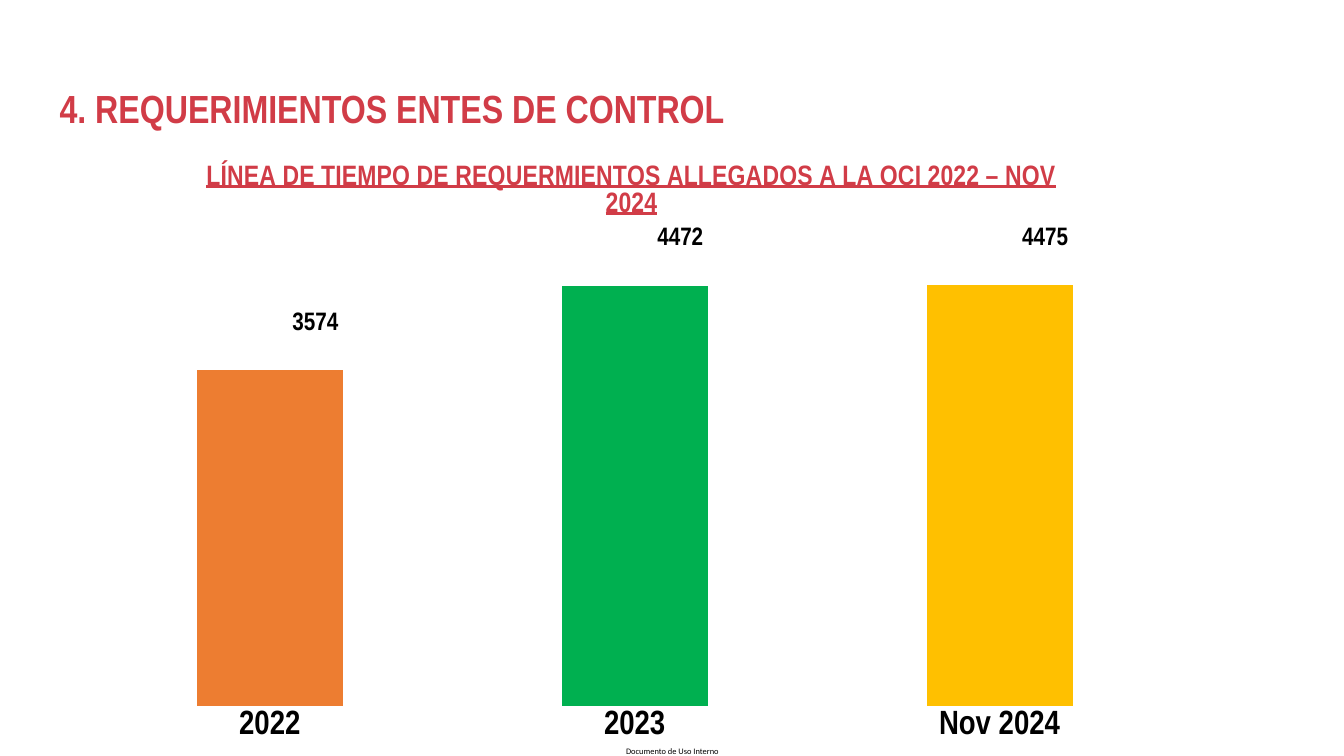
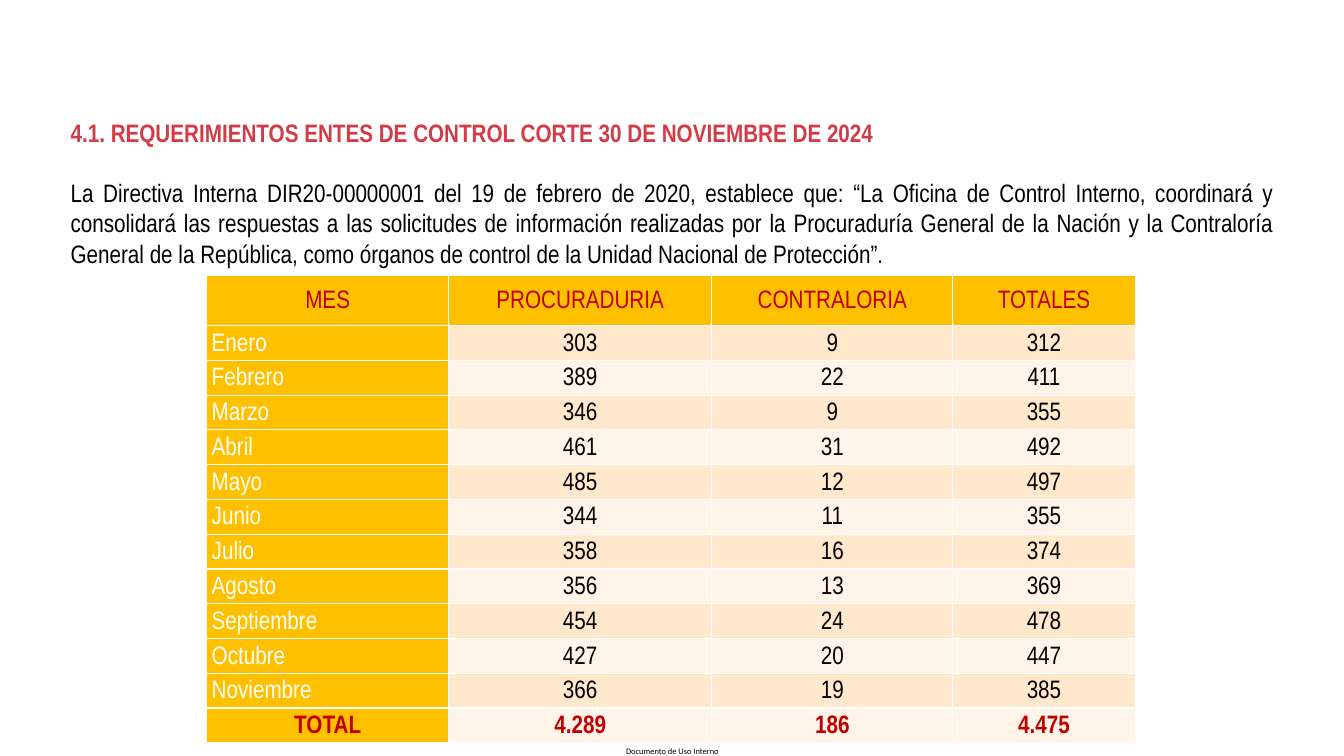
"""Build two slides on requests from control bodies: a yearly chart and a monthly table."""
from dataclasses import dataclass
from typing import Any

from lxml import etree
from pptx import Presentation
from pptx import util as u
from pptx.chart import data
from pptx.dml.color import RGBColor
from pptx.enum import chart as ch, text as tx
from pptx.oxml import ns

RED = RGBColor(0xD1, 0x3C, 0x47)
WINE = RGBColor(0xC0, 0x00, 0x00)
BLACK = RGBColor(0x00, 0x00, 0x00)
WHITE = RGBColor(0xFF, 0xFF, 0xFF)
GOLD = RGBColor(0xFF, 0xC0, 0x00)
ORANGE = RGBColor(0xED, 0x7D, 0x31)
GREEN = RGBColor(0x00, 0xB0, 0x50)
BANDS = (RGBColor(0xFF, 0xF4, 0xE7), RGBColor(0xFF, 0xE8, 0xCC))
FACE = "Arial Narrow"
LEFT, MID, JUST = tx.PP_ALIGN.LEFT, tx.PP_ALIGN.CENTER, tx.PP_ALIGN.JUSTIFY
TOP, BASE = tx.MSO_ANCHOR.TOP, tx.MSO_ANCHOR.BOTTOM


@dataclass(frozen=True)
class Box:
    """Place of an object in inches."""
    left: float
    top: float
    width: float
    height: float

    def lengths(self) -> tuple:
        return tuple(u.Inches(n) for n in (self.left, self.top, self.width, self.height))


@dataclass(frozen=True)
class Style:
    """Look of a piece of text."""
    size: float
    color: RGBColor = BLACK
    bold: bool = False
    face: str = FACE
    align: Any = JUST
    line: float = 1.0


@dataclass(frozen=True)
class Bar:
    """One column of the chart."""
    name: str
    value: int
    color: RGBColor


@dataclass(frozen=True)
class Month:
    """One row of counts in the table."""
    name: str
    first: int
    second: int

    def cells(self) -> list[str]:
        return [self.name, *map(str, (self.first, self.second, self.first + self.second))]


BARS = (Bar("2022", 3574, ORANGE), Bar("2023", 4472, GREEN), Bar("Nov 2024", 4475, GOLD))
MONTHS = (
    Month("Enero", 303, 9), Month("Febrero", 389, 22), Month("Marzo", 346, 9),
    Month("Abril", 461, 31), Month("Mayo", 485, 12), Month("Junio", 344, 11),
    Month("Julio", 358, 16), Month("Agosto", 356, 13), Month("Septiembre", 454, 24),
    Month("Octubre", 427, 20), Month("Noviembre", 366, 19),
)
HEADS = ["MES", "PROCURADURIA", "CONTRALORIA", "TOTALES"]
WIDTHS = (2.4, 2.61, 2.39, 1.81)
RULE = (
    "La Directiva Interna DIR20-00000001 del 19 de febrero de 2020, establece que: "
    "“La Oficina de Control Interno, coordinará y consolidará las respuestas a las "
    "solicitudes de información realizadas por la Procuraduría General de la Nación y la "
    "Contraloría General de la República, como órganos de control de la Unidad Nacional "
    "de Protección”."
)


def assign(item: Any, values: dict) -> None:
    for key, value in values.items():
        setattr(item, key, value)


def ink(font: Any, style: Style) -> None:
    assign(font, {"size": u.Pt(style.size), "bold": style.bold, "name": style.face})
    font.color.rgb = style.color


def write(frame: Any, words: str, style: Style) -> None:
    frame.text = words
    para = frame.paragraphs[0]
    assign(para, {"alignment": style.align, "line_spacing": style.line,
                  "space_before": u.Pt(0)})
    ink(para.runs[0].font, style)


def fill_holder(shape: Any, box: Box, words: str, style: Style, anchor: Any) -> None:
    assign(shape, dict(zip(("left", "top", "width", "height"), box.lengths())))
    frame = shape.text_frame
    assign(frame, {"word_wrap": True, "auto_size": tx.MSO_AUTO_SIZE.NONE,
                   "vertical_anchor": anchor})
    write(frame, words, style)


def strip_bullet(para: Any) -> None:
    props = para._p.get_or_add_pPr()
    for key in ("marL", "indent"):
        props.set(key, "0")
    etree.SubElement(props, ns.qn("a:buNone"))


def add_foot(deck: Any, slide: Any) -> None:
    box = slide.shapes.add_textbox(*Box(6.21, 7.4, 0.94, 0.1).lengths())
    sides = ("left", "top", "right", "bottom")
    assign(box.text_frame, {f"margin_{side}": 0 for side in sides})
    write(box.text_frame, "Documento de Uso Interno", Style(6, face="Calibri", align=LEFT))
    box.element.nvSpPr.cNvPr.set("id", "99")
    deck.slide_master.shapes.element.append(box.element)


def place(node: Any, index: int, **values: Any) -> None:
    for old in node.findall(ns.qn("c:layout")):
        node.remove(old)
    layout = etree.Element(ns.qn("c:layout"))
    manual = etree.SubElement(layout, ns.qn("c:manualLayout"))
    for key, value in values.items():
        etree.SubElement(manual, ns.qn(f"c:{key}")).set("val", str(value))
    node.insert(index, layout)


def add_bars(slide: Any, box: Box) -> None:
    source = data.CategoryChartData()
    source.categories = [bar.name for bar in BARS]
    source.add_series("Series 1", [bar.value for bar in BARS])
    kind = ch.XL_CHART_TYPE.COLUMN_CLUSTERED
    chart = slide.shapes.add_chart(kind, *box.lengths(), source).chart
    ink(chart.font, Style(10))
    assign(chart, {"has_legend": False, "has_title": True})
    title = chart.chart_title
    write(title.text_frame, "LÍNEA DE TIEMPO DE REQUERMIENTOS ALLEGADOS A LA OCI 2022 – NOV 2024",
          Style(20, RED, True, align=MID, line=0.9))
    title.text_frame.paragraphs[0].runs[0].font.underline = True
    place(title.element, 1, xMode="edge", yMode="edge", x=0.12, y=0.03)

    axis = chart.category_axis
    axis.major_tick_mark = ch.XL_TICK_MARK.NONE
    axis.format.line.fill.background()
    ink(axis.tick_labels.font, Style(24, bold=True))
    assign(chart.value_axis, {"visible": False, "has_major_gridlines": False,
                              "minimum_scale": 0, "maximum_scale": 5000})
    plot = chart.plots[0]
    assign(plot, {"gap_width": 150, "vary_by_categories": False})
    for index, bar in enumerate(BARS):
        point = plot.series[0].points[index]
        point.format.fill.solid()
        point.format.fill.fore_color.rgb = bar.color
        ink(point.data_label.font, Style(18, bold=True))
        point.data_label.position = ch.XL_LABEL_POSITION.OUTSIDE_END
    for label in chart.element.xpath(".//c:dLbl"):
        place(label, 1, x=0.04, y=-0.05)
    for leader in chart.element.xpath(".//c:showLeaderLines"):
        leader.set("val", "0")
    place(chart.element.xpath(".//c:plotArea")[0], 0, layoutTarget="inner",
          xMode="edge", yMode="edge", x=0.02, y=0.16, w=0.96, h=0.76)


def add_cell(cell: Any, words: str, style: Style, color: RGBColor) -> None:
    assign(cell, {"margin_left": u.Inches(0.05), "margin_right": u.Inches(0.05),
                  "margin_top": 0, "margin_bottom": 0,
                  "vertical_anchor": tx.MSO_ANCHOR.MIDDLE})
    cell.fill.solid()
    cell.fill.fore_color.rgb = color
    write(cell.text_frame, words, style)


def add_grid(slide: Any, left: float, top: float) -> None:
    first = sum(month.first for month in MONTHS)
    second = sum(month.second for month in MONTHS)
    sums = [f"{n:,}".replace(",", ".") for n in (first, second, first + second)]
    rows = [HEADS, *(month.cells() for month in MONTHS), ["TOTAL", *sums]]
    last = len(rows) - 1
    highs = [0.5] + [4.14 / last] * last
    box = Box(left, top, sum(WIDTHS), sum(highs))
    table = slide.shapes.add_table(len(rows), len(WIDTHS), *box.lengths()).table
    for column, width in zip(table.columns, WIDTHS):
        column.width = u.Inches(width)
    for r, (row, high) in enumerate(zip(rows, highs)):
        table.rows[r].height = u.Inches(high)
        for c, words in enumerate(row):
            if r in (0, last):
                style = Style(18, WINE, r == last, align=MID, line=1.15)
            elif c == 0:
                style = Style(18, WHITE, align=LEFT, line=1.15)
            else:
                style = Style(18, align=MID, line=1.15)
            add_cell(table.cell(r, c), words, style, GOLD if 0 in (r, c) else BANDS[r % 2])


def add_years(deck: Any) -> Any:
    slide = deck.slides.add_slide(deck.slide_layouts[5])
    add_bars(slide, Box(0.64, 1.36, 11.31, 6.14))
    fill_holder(slide.shapes.title, Box(0.49, 0.69, 9.1, 0.67),
                "4. REQUERIMIENTOS ENTES DE CONTROL", Style(28, RED, True, line=0.9), BASE)
    return slide


def add_months(deck: Any) -> None:
    slide = deck.slides.add_slide(deck.slide_layouts[1])
    fill_holder(slide.shapes.title, Box(0.6, 1.11, 12.14, 0.4),
                "4.1. REQUERIMIENTOS ENTES DE CONTROL CORTE 30 DE NOVIEMBRE DE 2024",
                Style(18, RED, True), TOP)
    body = slide.placeholders[1]
    fill_holder(body, Box(0.6, 1.71, 12.14, 1.01), RULE, Style(18), TOP)
    strip_bullet(body.text_frame.paragraphs[0])
    add_grid(slide, 2.05, 2.73)


def main() -> None:
    deck = Presentation()
    assign(deck, {"slide_width": u.Inches(13.33), "slide_height": u.Inches(7.5)})
    add_foot(deck, add_years(deck))
    add_months(deck)
    deck.save("out.pptx")


if __name__ == "__main__":
    main()
